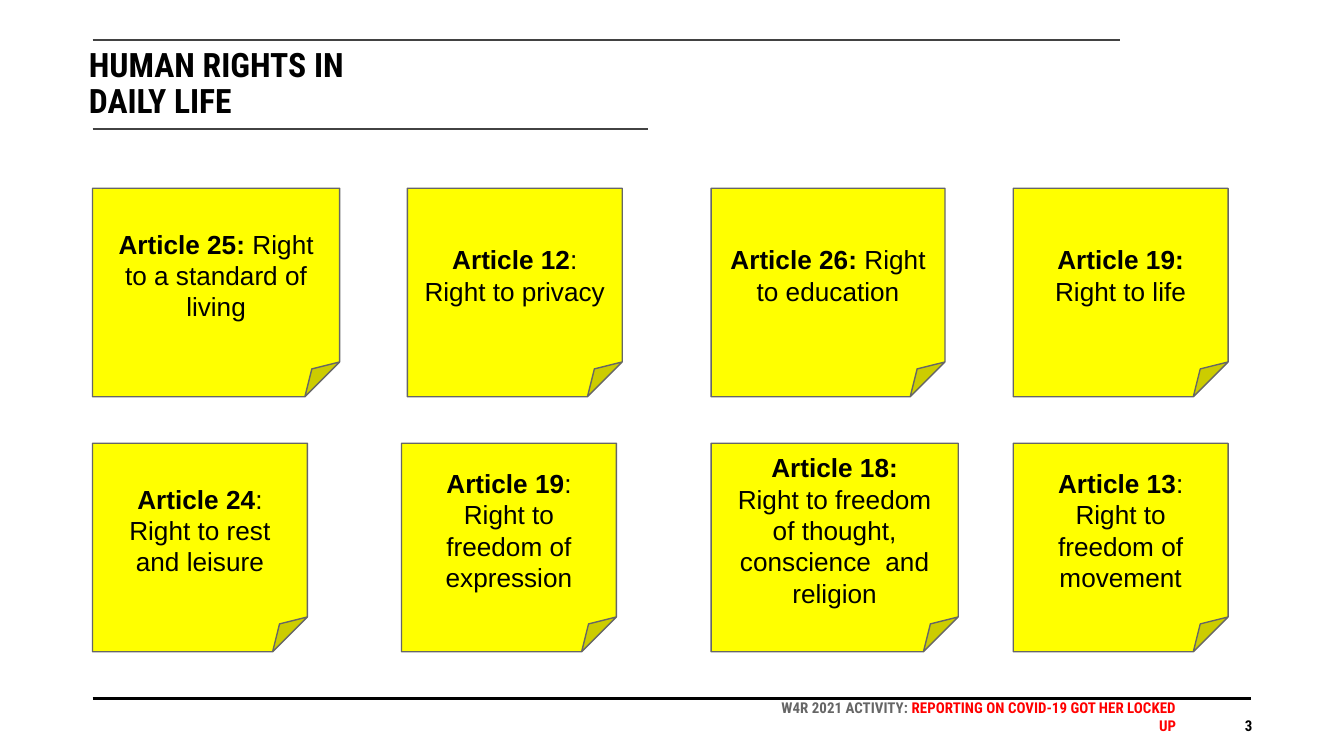
from pptx import Presentation
from pptx.dml.color import RGBColor
from pptx.enum.shapes import MSO_CONNECTOR, MSO_SHAPE
from pptx.enum.text import MSO_ANCHOR, MSO_AUTO_SIZE, PP_ALIGN
from pptx.oxml.ns import qn
from pptx.util import Cm, Pt
from lxml.etree import SubElement

BLACK = RGBColor(0x00, 0x00, 0x00)
DARK = RGBColor(0x42, 0x42, 0x42)
GREY = RGBColor(0x66, 0x66, 0x66)
RED = RGBColor(0xFF, 0x00, 0x00)
YELLOW = RGBColor(0xFF, 0xFF, 0x00)

LEFT = 1.75
NOTE_HIGH = 3.94
ROWS = [
    (3.56, [
        (LEFT, 4.67, [[("Article 25:", True), (" Right to a standard of living", False)]]),
        (7.7, 4.06, [[("Article 12", True), (": Right to privacy", False)]]),
        (13.44, 4.42, [[("Article 26:", True), (" Right to education", False)]]),
        (19.15, 4.06, [[("Article 19:", True), (" Right to life", False)]]),
    ]),
    (8.38, [
        (LEFT, 4.06, [[("Article 24", True), (": Right to rest and leisure", False)]]),
        (7.59, 4.06, [[("Article 19", True), (": Right to freedom of expression", False)]]),
        (13.44, 4.67, [[("Article 18:", True)],
                       [("Right to freedom of thought, conscience  and religion", False)]]),
        (19.15, 4.06, [[("Article 13", True), (": Right to freedom of movement", False)]]),
    ]),
]


class Deck:
    head = "Roboto Condensed"
    body = "Arial"

    def __init__(self, show):
        self.slide = show.slides.add_slide(show.slide_layouts[5])
        self.shapes = self.slide.shapes

    def style(self, font, name, size, color=BLACK, bold=None):
        font.name, font.size, font.bold = name, Pt(size), bold
        font.color.rgb = color

    def frame(self, shape, side, edge, anchor):
        frame = shape.text_frame
        frame.word_wrap = True
        frame.auto_size = MSO_AUTO_SIZE.NONE
        frame.vertical_anchor = anchor
        frame.margin_left = frame.margin_right = Cm(side)
        frame.margin_top = frame.margin_bottom = Cm(edge)
        return frame

    def rule(self, right, top, color, width):
        line = self.shapes.add_connector(
            MSO_CONNECTOR.STRAIGHT, Cm(LEFT), Cm(top), Cm(right), Cm(top))
        line.line.color.rgb = color
        line.line.width = Pt(width)
        SubElement(line._element.spPr, qn("a:effectLst"))

    def title(self, text):
        shape = self.shapes.title
        shape.left, shape.top = Cm(1.5), Cm(0.91)
        shape.width, shape.height = Cm(8.61), Cm(1.32)
        frame = self.frame(shape, 0.18, 0, MSO_ANCHOR.TOP)
        frame.text = text
        para = frame.paragraphs[0]
        para.alignment = PP_ALIGN.LEFT
        para.line_spacing = 0.9
        self.style(para.font, self.head, 18, bold=True)

    def note(self, left, top, width, paras):
        shape = self.shapes.add_shape(
            MSO_SHAPE.FOLDED_CORNER, Cm(left), Cm(top), Cm(width), Cm(NOTE_HIGH))
        shape.shadow.inherit = False
        shape.fill.solid()
        shape.fill.fore_color.rgb = YELLOW
        shape.line.color.rgb = GREY
        shape.line.width = Pt(0.75)
        frame = self.frame(shape, 0.25, 0.25, MSO_ANCHOR.MIDDLE)
        for i, parts in enumerate(paras):
            para = frame.add_paragraph() if i else frame.paragraphs[0]
            para.alignment = PP_ALIGN.CENTER
            self.style(para.font, self.body, 14)
            for text, bold in parts:
                run = para.add_run()
                run.text = text
                run.font.bold = bold

    def label(self, left, top, width, height, parts):
        shape = self.shapes.add_textbox(Cm(left), Cm(top), Cm(width), Cm(height))
        frame = self.frame(shape, 0, 0, MSO_ANCHOR.BOTTOM)
        para = frame.paragraphs[0]
        para.alignment = PP_ALIGN.RIGHT
        self.style(para.font, self.head, 8, bold=True)
        for text, color in parts:
            run = para.add_run()
            run.text = text
            run.font.color.rgb = color


def main():
    show = Presentation()
    show.slide_width, show.slide_height = Cm(25.4), Cm(14.29)
    deck = Deck(show)
    deck.rule(23.65, 13.21, BLACK, 1.5)
    deck.rule(21.16, 0.76, DARK, 1)
    deck.rule(12.24, 2.44, DARK, 1)
    deck.title("HUMAN RIGHTS IN\vDAILY LIFE")
    for top, notes in ROWS:
        for left, width, paras in notes:
            deck.note(left, top, width, paras)
    deck.label(22.4, 13.61, 1.27, 0.28, [("3", BLACK)])
    deck.label(14.53, 13.46, 7.7, 0.43, [
        ("W4R 2021 ACTIVITY: ", GREY),
        ("REPORTING ON COVID-19 GOT HER LOCKED UP", RED),
    ])
    show.save("out.pptx")


if __name__ == "__main__":
    main()
